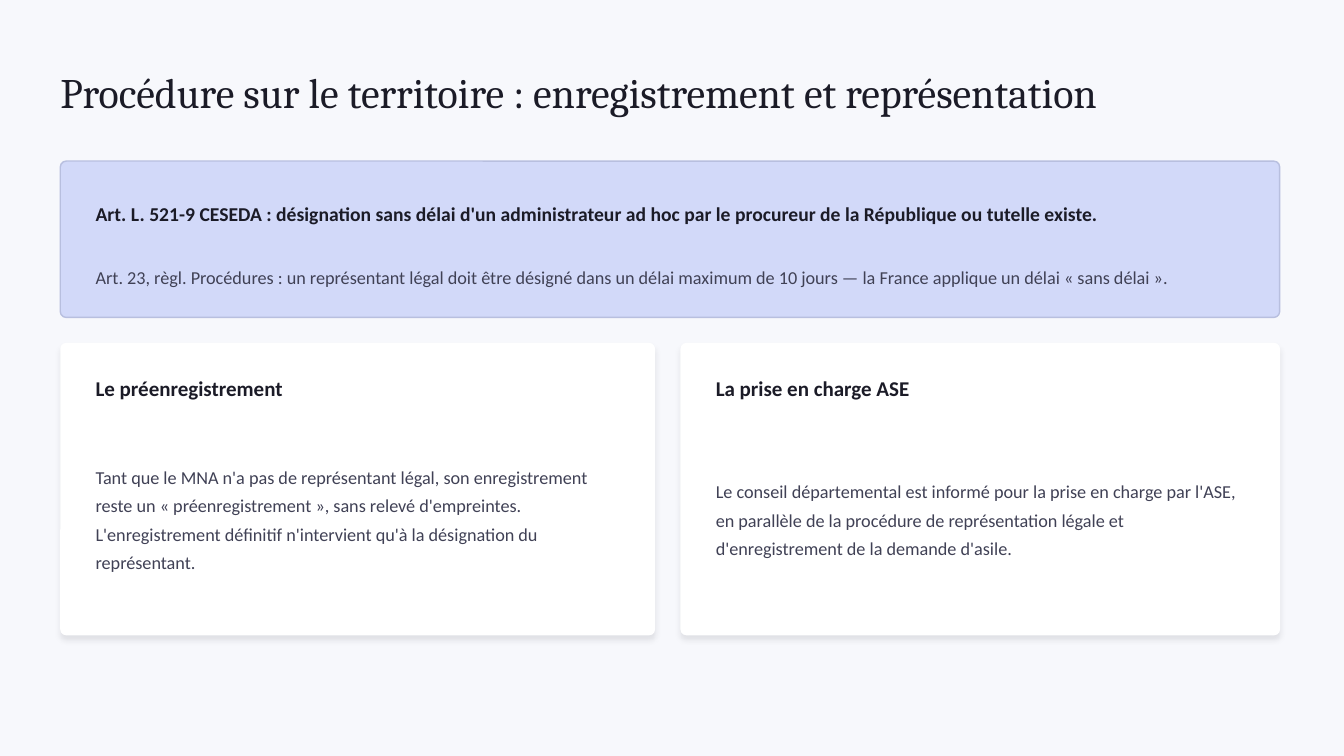
import pptx
import pptx.dml.color
import pptx.enum.shapes
import pptx.enum.text
import pptx.oxml
import pptx.oxml.ns
import pptx.util

Cm = pptx.util.Cm

TITLE = "Procédure sur le territoire : enregistrement et représentation"
RULE = ("Art. L. 521-9 CESEDA : désignation sans délai d'un administrateur ad hoc "
        "par le procureur de la République ou tutelle existe.")
DEADLINE = ("Art. 23, règl. Procédures : un représentant légal doit être désigné dans un délai "
            "maximum de 10 jours — la France applique un délai « sans délai ».")
CARDS = [
    ("Le préenregistrement", 14.99,
     "Tant que le MNA n'a pas de représentant légal, son enregistrement reste un "
     "« préenregistrement », sans relevé d'empreintes. L'enregistrement définitif "
     "n'intervient qu'à la désignation du représentant."),
    ("La prise en charge ASE", 15.11,
     "Le conseil départemental est informé pour la prise en charge par l'ASE, en parallèle "
     "de la procédure de représentation légale et d'enregistrement de la demande d'asile."),
]

COLORS = {"page": "F7F8FC", "ink": "1B1B27", "body": "404155",
          "banner": "D2D9F9", "border": "B8BFDF", "card": "FFFFFF"}

MARGIN, GAP, INSET, CORNER = 1.52, 0.64, 0.89, 0.15
BANNER_TOP, BANNER_WIDTH, BANNER_HEIGHT = 4.06, 30.73, 3.94
CARD_TOP, CARD_HEIGHT = 8.64, 7.37


def color(name):
    return pptx.dml.color.RGBColor.from_string(COLORS[name])


def write(box, text, size, ink, bold=False, spacing=1.0, font="Calibri"):
    frame = box.text_frame
    frame.word_wrap = True
    frame.auto_size = pptx.enum.text.MSO_AUTO_SIZE.NONE
    frame.vertical_anchor = pptx.enum.text.MSO_ANCHOR.MIDDLE
    frame.margin_left = frame.margin_right = frame.margin_top = frame.margin_bottom = 0
    para = frame.paragraphs[0]
    para.text = text
    para.alignment = pptx.enum.text.PP_ALIGN.LEFT
    para.line_spacing = spacing
    para.font.name = font
    para.font.size = pptx.util.Pt(size)
    para.font.bold = bold
    para.font.color.rgb = color(ink)


def add_text(page, left, top, width, height, *content, **style):
    box = page.shapes.add_textbox(Cm(left), Cm(top), Cm(width), Cm(height))
    write(box, *content, **style)


def add_panel(page, left, top, width, height, fill):
    panel = page.shapes.add_shape(pptx.enum.shapes.MSO_SHAPE.ROUNDED_RECTANGLE,
                                  Cm(left), Cm(top), Cm(width), Cm(height))
    panel.adjustments[0] = CORNER / height
    panel.fill.solid()
    panel.fill.fore_color.rgb = color(fill)
    panel.line.fill.background()
    panel.shadow.inherit = False
    return panel


def add_soft_shadow(panel):
    effects = panel._element.spPr.find(pptx.oxml.ns.qn("a:effectLst"))
    effects.append(pptx.oxml.parse_xml(
        f'<a:outerShdw {pptx.oxml.ns.nsdecls("a")} blurRad="{pptx.util.Pt(4)}" '
        f'dist="{pptx.util.Pt(3)}" dir="5400000" algn="ctr" rotWithShape="0">'
        f'<a:srgbClr val="{COLORS["ink"]}"><a:alpha val="10000"/></a:srgbClr></a:outerShdw>'))


def main():
    deck = pptx.Presentation()
    deck.slide_width, deck.slide_height = Cm(33.87), Cm(19.05)
    page = deck.slides.add_slide(deck.slide_layouts.get_by_name("Title Only"))
    page.background.fill.solid()
    page.background.fill.fore_color.rgb = color("page")

    title = page.shapes.title
    title.left, title.top, title.width, title.height = Cm(MARGIN), Cm(1.14), Cm(30.81), Cm(2.29)
    write(title, TITLE, 30, "ink", spacing=1.04, font="Cambria")

    banner = add_panel(page, MARGIN, BANNER_TOP, BANNER_WIDTH, BANNER_HEIGHT, "banner")
    banner.line.color.rgb = color("border")
    banner.line.width = pptx.util.Pt(1)
    text_left, text_width = MARGIN + INSET, BANNER_WIDTH - 2 * INSET
    add_text(page, text_left, BANNER_TOP + 0.56, text_width, 1.4,
             RULE, 14, "ink", bold=True, spacing=1.25)
    add_text(page, text_left, BANNER_TOP + 2.03, text_width, 1.65,
             DEADLINE, 13, "body", spacing=1.25)

    left = MARGIN
    for heading, width, body in CARDS:
        add_soft_shadow(add_panel(page, left, CARD_TOP, width, CARD_HEIGHT, "card"))
        text_left, text_width = left + INSET, width - 2 * INSET
        add_text(page, text_left, CARD_TOP + 0.56, text_width, 1.14,
                 heading, 15, "ink", bold=True)
        add_text(page, text_left, CARD_TOP + 1.9, text_width, 4.95,
                 body, 13, "body", spacing=1.3)
        left += width + GAP

    deck.save("out.pptx")


if __name__ == "__main__":
    main()
